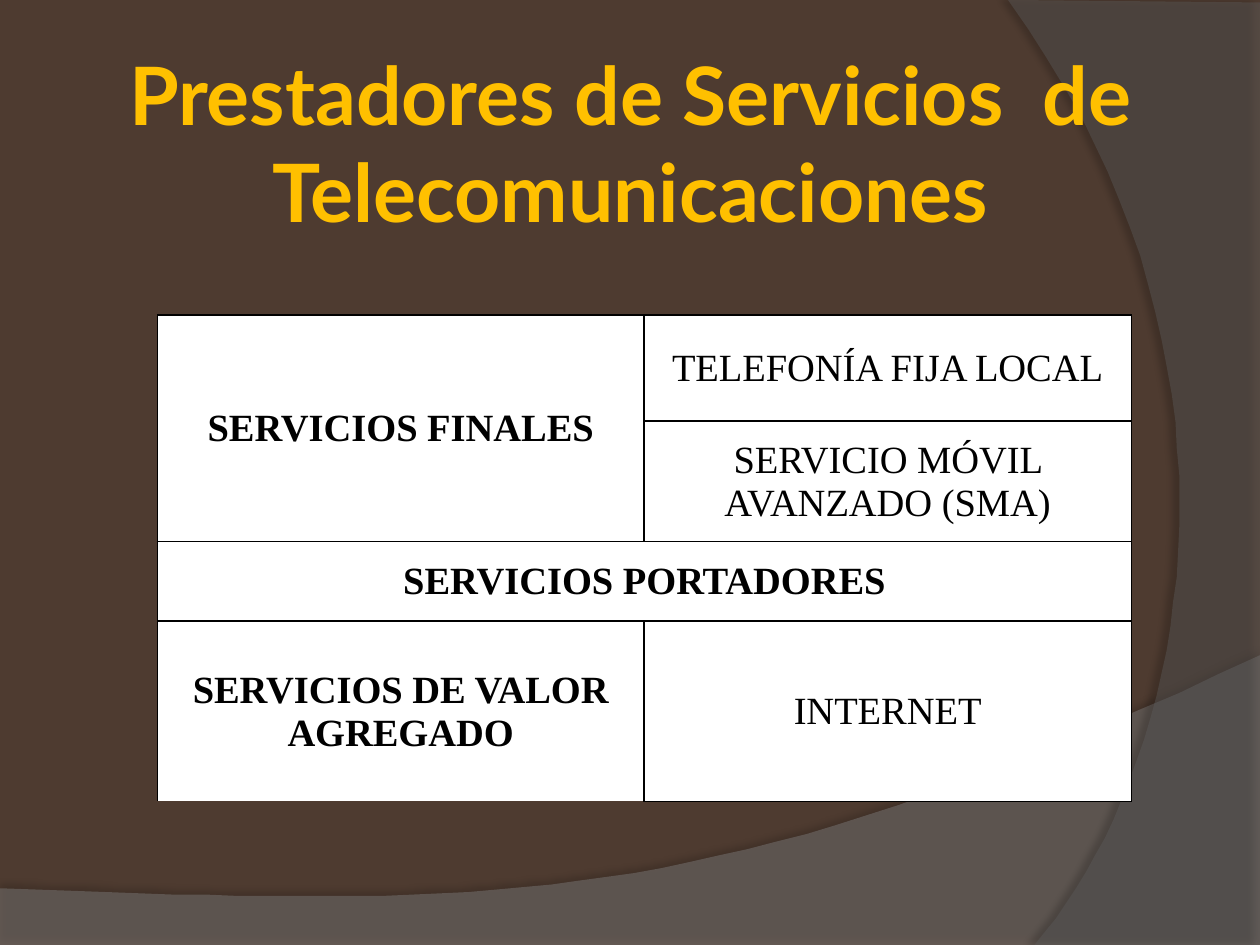
from lxml.etree import SubElement
from pptx import Presentation
from pptx.dml.color import RGBColor
from pptx.enum.text import MSO_ANCHOR, MSO_AUTO_SIZE, PP_ALIGN
from pptx.oxml import parse_xml
from pptx.oxml.ns import nsdecls, qn
from pptx.util import Pt

PX = 9144  # EMU in one px, 100 px to the inch
COLORS = {
    "background": "4E3B30",
    "lower_wave": "7F7F7F",
    "right_wave": "5E5E5E",
    "title": "FFC000",
    "ink": "000000",
    "cell": "FFFFFF",
}
COLUMNS = (386, 387)
ROWS = (84, 96, 63, 143)
# row, column, rows spanned, columns spanned, text, bold
CELLS = (
    (0, 0, 2, 1, "SERVICIOS FINALES", True),
    (0, 1, 1, 1, "TELEFONÍA FIJA LOCAL", False),
    (1, 1, 1, 1, "SERVICIO MÓVIL AVANZADO (SMA)", False),
    (2, 0, 1, 2, "SERVICIOS PORTADORES", True),
    (3, 0, 1, 1, "SERVICIOS DE VALOR AGREGADO", True),
    (3, 1, 1, 1, "INTERNET", False),
)


def rgb(name):
    return RGBColor.from_string(COLORS[name])


def bezier(start, first, second, end, steps=40):
    """Return points along a cubic curve, without its start."""
    points = []
    for step in range(1, steps + 1):
        t = step / steps
        weights = ((1 - t) ** 3, 3 * t * (1 - t) ** 2, 3 * t * t * (1 - t), t ** 3)
        points.append(tuple(
            sum(w * value for w, value in zip(weights, axis))
            for axis in zip(start, first, second, end)
        ))
    return points


def write(frame, text, font, size, color, bold):
    """Put one centred run into a text frame."""
    frame.word_wrap = True
    para = frame.paragraphs[0]
    para.alignment = PP_ALIGN.CENTER
    span = para.add_run()
    span.text = text
    span.font.name = font
    span.font.size = Pt(size)
    span.font.bold = bold
    span.font.color.rgb = rgb(color)


def add_wave(page, box, points, color, opacity, shadow):
    """Draw a translucent outline; shadow is opacity, blur, distance, angle."""
    left, top = box
    builder = page.shapes.build_freeform(*points[0], scale=PX)
    builder.add_line_segments(points[1:], close=True)
    wave = builder.convert_to_shape(left * PX, top * PX)
    wave.fill.solid()
    wave.fill.fore_color.rgb = rgb(color)
    wave.line.fill.background()
    tint = wave.fill._xPr.find(qn("a:solidFill"))[0]
    SubElement(tint, qn("a:alpha"), val=str(opacity * 1000))
    shade, blur, distance, angle = shadow
    wave.shadow.inherit = False
    effects = wave._element.spPr.find(qn("a:effectLst"))
    effects.append(parse_xml(
        f'<a:outerShdw {nsdecls("a")} blurRad="{Pt(blur)}" dist="{Pt(distance)}" '
        f'dir="{angle * 60000}" algn="ctr" rotWithShape="0">'
        f'<a:srgbClr val="{COLORS["ink"]}"><a:alpha val="{shade * 1000}"/></a:srgbClr>'
        '</a:outerShdw>'
    ))


def add_background(page):
    page.background.fill.solid()
    page.background.fill.fore_color.rgb = rgb("background")
    lower = [(0, 185), (0, 231), (1000, 231), (1000, 0)]
    lower += bezier((1000, 0), (559, 209), (391, 199), (0, 185))
    add_wave(page, (0, 520), lower, "lower_wave", 45, (35, 4, 3.5, 270))
    right = [(200, 2), (200, 750), (21, 750)]
    right += bezier((21, 750), (135, 619), (218, 300), (0, 0))
    add_wave(page, (800, 0), right, "right_wave", 40, (45, 4, 4, 180))


def place_title(page, box):
    title = page.shapes.title
    title.left, title.top, title.width, title.height = (n * PX for n in box)
    frame = title.text_frame
    frame.auto_size = MSO_AUTO_SIZE.NONE
    frame.vertical_anchor = MSO_ANCHOR.MIDDLE
    frame.margin_left = frame.margin_right = 5 * PX
    frame.margin_top = frame.margin_bottom = 5 * PX
    write(frame, "Prestadores de Servicios  de Telecomunicaciones",
          "Lato", 46, "title", True)


def style_cell(cell, sides):
    """Set fill, margins and the borders named by sides."""
    cell.fill.solid()
    cell.fill.fore_color.rgb = rgb("cell")
    cell.vertical_anchor = MSO_ANCHOR.MIDDLE
    cell.margin_left = cell.margin_right = cell.margin_top = PX
    cell.margin_bottom = 0
    properties = cell._tc.get_or_add_tcPr()
    for index, side in enumerate("LRTB"):
        paint = (f'<a:solidFill><a:srgbClr val="{COLORS["ink"]}"/></a:solidFill>'
                 if side in sides else "<a:noFill/>")
        properties.insert(index, parse_xml(
            f'<a:ln{side} {nsdecls("a")} w="{Pt(1)}">{paint}</a:ln{side}>'))


def add_services_table(page, box):
    left, top = box
    size = (sum(COLUMNS) * PX, sum(ROWS) * PX)
    table = page.shapes.add_table(
        len(ROWS), len(COLUMNS), left * PX, top * PX, *size).table
    table.first_row = table.horz_banding = False
    for column, width in zip(table.columns, COLUMNS):
        column.width = width * PX
    for row, height in zip(table.rows, ROWS):
        row.height = height * PX
    last = table.cell(len(ROWS) - 1, 0)
    for cell in table.iter_cells():
        style_cell(cell, "LRT" if cell == last else "LRTB")
    for row, column, down, across, text, bold in CELLS:
        cell = table.cell(row, column)
        if down * across > 1:
            cell.merge(table.cell(row + down - 1, column + across - 1))
        write(cell.text_frame, text, "Times New Roman", 22, "ink", bold)


def main():
    deck = Presentation()
    deck.slide_width, deck.slide_height = 1000 * PX, 750 * PX
    page = deck.slides.add_slide(deck.slide_layouts.get_by_name("Title Only"))
    add_background(page)
    place_title(page, (0, 30, 1000, 165))
    # The title goes above the waves.
    page.shapes._spTree.append(page.shapes.title._element)
    add_services_table(page, (125, 250))
    deck.save("out.pptx")


if __name__ == "__main__":
    main()
